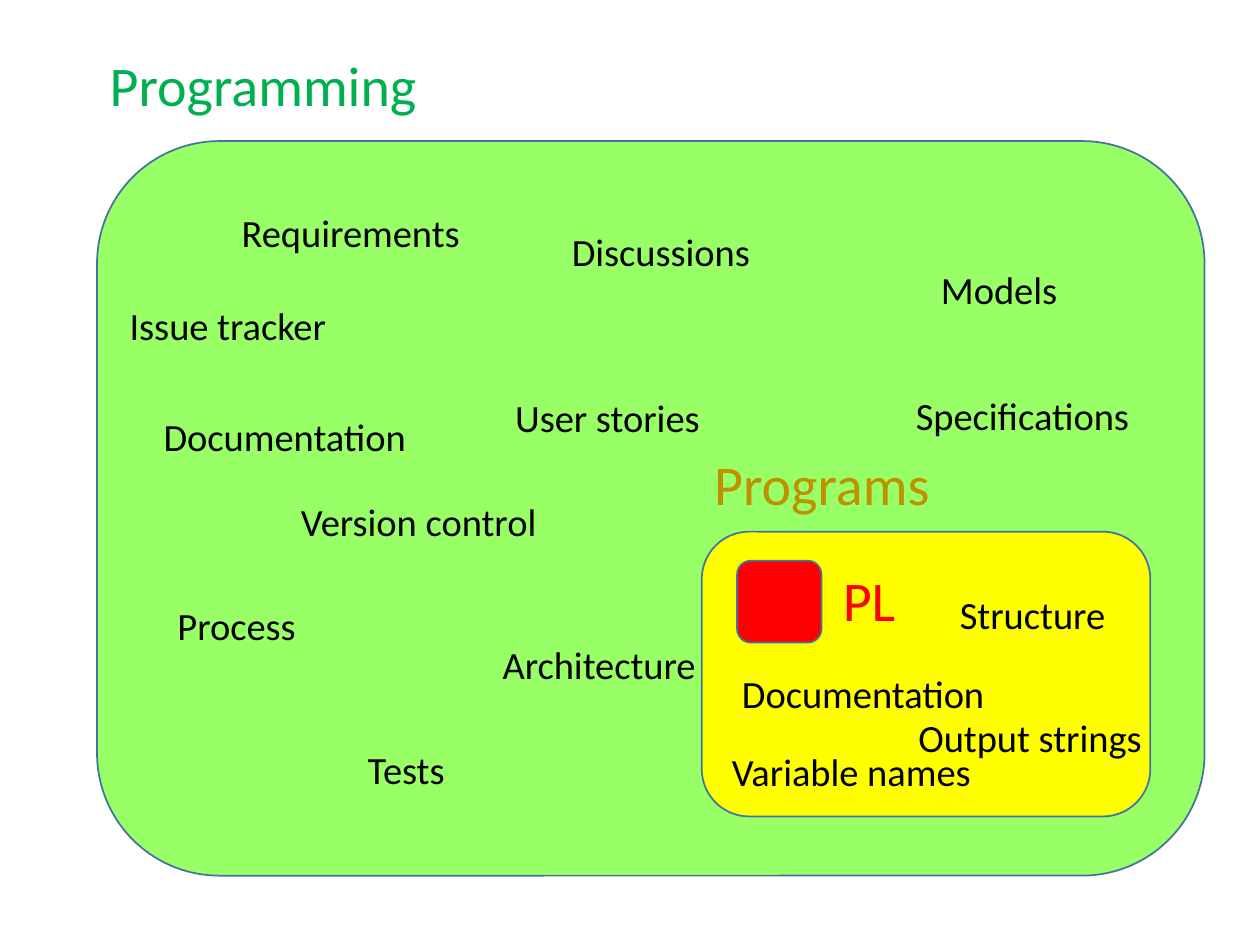
from dataclasses import dataclass

from pptx import Presentation
from pptx.dml.color import RGBColor
from pptx.enum.shapes import MSO_SHAPE as Shape
from pptx.enum.text import MSO_ANCHOR as Anchor, MSO_AUTO_SIZE as Fit, PP_ALIGN as Align
from pptx.util import Inches, Pt

# The slide is a grid of 100 columns by 75 rows
COLS, ROWS = 100, 75
CELL = Inches(0.1)


@dataclass(frozen=True)
class Theme:
    font: str = "Calibri"
    head: int = 32
    body: int = 22
    edge: str = "43739E"
    black: str = "000000"
    lime: str = "99FF66"
    green: str = "00B050"
    yellow: str = "FFFF00"
    gold: str = "BF9000"
    red: str = "FF0000"


@dataclass(frozen=True)
class Area:
    col: float
    row: float
    wide: float
    high: float
    fill: str


@dataclass(frozen=True)
class Label:
    text: str
    col: float
    row: float
    wide: float
    high: float = 4.7
    size: int = Theme.body
    color: str = Theme.black
    wrap: bool = False


THEME = Theme()
HEAD = {"high": 6.4, "size": THEME.head, "wrap": True}

TITLE = Label("Programming", 7.7, 3.5, 28.3, color=THEME.green, **HEAD)

# Nested areas, from outer to inner
AREAS = [
    Area(7.7, 11.2, 87.9, 58.3, THEME.lime),
    Area(55.7, 42.2, 35.6, 22.6, THEME.yellow),
    Area(58.5, 44.5, 6.7, 6.5, THEME.red),
]

LABELS = [
    # Names of the inner areas
    Label("Programs", 55.7, 35.2, 28.3, color=THEME.gold, **HEAD),
    Label("PL", 65.9, 44.4, 7.2, color=THEME.red, **HEAD),
    # Parts of programming
    Label("Requirements", 18.2, 16.1, 19.5),
    Label("Discussions", 44.4, 17.6, 16.3),
    Label("Models", 73.7, 20.6, 11.3),
    Label("Issue tracker", 9.3, 23.5, 17.8),
    Label("Specifications", 71.7, 30.6, 19.1),
    Label("User stories", 39.9, 30.8, 16.9),
    Label("Documentation", 12, 32.3, 21.5),
    Label("Version control", 22.9, 39, 20.9),
    Label("Process", 13.1, 47.3, 11.5),
    Label("Architecture", 38.9, 50.4, 17.5),
    Label("Tests", 28.2, 58.7, 8.2),
    # Parts of programs
    Label("Structure", 75.2, 46.4, 13.7),
    Label("Documentation", 57.9, 52.7, 21.5),
    Label("Output strings", 71.9, 56.2, 19.9),
    Label("Variable names", 57.1, 58.9, 21.2),
]


def grid(*cells: float) -> list[int]:
    return [round(n * CELL) for n in cells]


def place(item: Area | Label) -> list[int]:
    return grid(item.col, item.row, item.wide, item.high)


def style(target, values: dict) -> None:
    for name, value in values.items():
        setattr(target, name, value)


def draw_area(slide, area: Area) -> None:
    box = slide.shapes.add_shape(Shape.ROUNDED_RECTANGLE, *place(area))
    box.shadow.inherit = False
    box.fill.solid()
    box.fill.fore_color.rgb = RGBColor.from_string(area.fill)
    box.line.color.rgb = RGBColor.from_string(THEME.edge)
    box.line.width = Pt(1)


def write(box, label: Label) -> None:
    frame = box.text_frame
    frame.text = label.text
    style(frame, {
        "word_wrap": label.wrap,
        "auto_size": Fit.SHAPE_TO_FIT_TEXT,
        "vertical_anchor": Anchor.TOP,
    })
    line = frame.paragraphs[0]
    line.alignment = Align.LEFT
    font = line.runs[0].font
    style(font, {"name": THEME.font, "size": Pt(label.size)})
    font.color.rgb = RGBColor.from_string(label.color)


def main() -> None:
    deck = Presentation()
    style(deck, {"slide_width": COLS * CELL, "slide_height": ROWS * CELL})
    slide = deck.slides.add_slide(deck.slide_layouts.get_by_name("Title Only"))

    # Title
    title = slide.shapes.title
    style(title, dict(zip(("left", "top", "width", "height"), place(TITLE))))
    write(title, TITLE)

    # Areas and their labels
    for area in AREAS:
        draw_area(slide, area)
    for label in LABELS:
        write(slide.shapes.add_textbox(*place(label)), label)

    deck.save("out.pptx")


if __name__ == "__main__":
    main()
